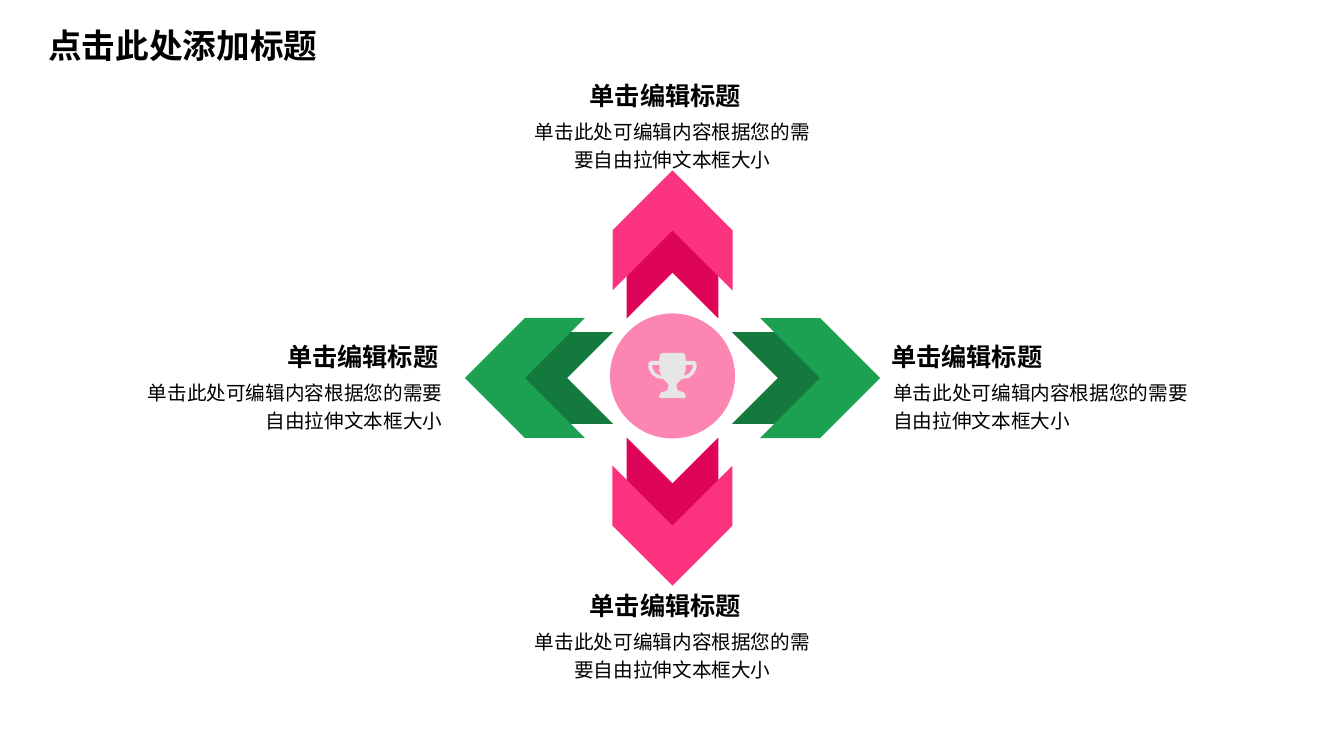
"""Build a slide with four chevron arrows around a trophy."""
from pptx import Presentation
from pptx.dml.color import RGBColor
from pptx.enum.shapes import MSO_SHAPE
from pptx.enum.text import MSO_ANCHOR, MSO_AUTO_SIZE, PP_ALIGN
from pptx.oxml.ns import qn
from pptx.util import Pt
from lxml.etree import SubElement

PX = 9144
FONT = "Noto Sans CJK SC"
BLACK = RGBColor(0x00, 0x00, 0x00)
GREEN = RGBColor(0x1B, 0xA1, 0x51)
FOREST = RGBColor(0x14, 0x79, 0x3D)
PINK = RGBColor(0xFB, 0x33, 0x7F)
CRIMSON = RGBColor(0xDE, 0x04, 0x57)
ROSE = RGBColor(0xFD, 0x85, 0xB2)
GRAY = RGBColor(0xE7, 0xE6, 0xE6)
MID_X, MID_Y = 667, 375


def paint(shape, color):
    shape.fill.solid()
    shape.fill.fore_color.rgb = color
    shape.line.fill.background()
    shape.shadow.inherit = False


def write(shape, text, size, bold, align, inset=True):
    frame = shape.text_frame
    look = {"word_wrap": True, "auto_size": MSO_AUTO_SIZE.NONE,
            "vertical_anchor": MSO_ANCHOR.TOP}
    if not inset:
        look.update(margin_left=0, margin_right=0, margin_top=0, margin_bottom=0)
    for key, value in look.items():
        setattr(frame, key, value)
    para = frame.paragraphs[0]
    para.alignment = align
    run = para.add_run()
    run.text = text
    for key, value in {"size": Pt(size), "bold": bold, "name": FONT}.items():
        setattr(run.font, key, value)
    run.font.color.rgb = BLACK
    SubElement(run.font._element, qn("a:ea")).set("typeface", FONT)
    return para


deck = Presentation()
deck.slide_width, deck.slide_height = 1333 * PX, 750 * PX
slide = deck.slides.add_slide(deck.slide_layouts[5])
shapes = slide.shapes

title = shapes.title
place = {"left": 38, "top": 20, "width": 378, "height": 50}
for key, value in place.items():
    setattr(title, key, value * PX)
write(title, "点击此处添加标题", 24, True, PP_ALIGN.LEFT)

arms = [
    (1, 0, 0, FOREST, GREEN),
    (-1, 0, 180, FOREST, GREEN),
    (0, 1, 90, CRIMSON, PINK),
    (0, -1, 270, CRIMSON, PINK),
]
for dx, dy, turn, dark, light in arms:
    for gap, size, color in [(59, 91, dark), (87, 119, light)]:
        reach = gap + size / 2
        left = MID_X + dx * reach - size / 2
        top = MID_Y + dy * reach - size / 2
        arrow = shapes.add_shape(MSO_SHAPE.CHEVRON, int(left * PX),
                                 int(top * PX), size * PX, size * PX)
        arrow.rotation = turn
        paint(arrow, color)

disc = shapes.add_shape(MSO_SHAPE.OVAL, 605 * PX, 311 * PX, 124 * PX, 124 * PX)
paint(disc, ROSE)

half = [(675, 350), (679, 351), (680, 355), (680, 358), (688, 358), (690, 359),
        (691, 361), (691, 365), (688, 371), (683, 375), (676, 376), (673, 379),
        (671, 381), (671, 384), (672, 387), (674, 388), (678, 389), (680, 392),
        (680, 394), (679, 395)]
grip = [(680, 362), (687, 362), (687, 365), (684, 370), (678, 373), (680, 368)]
flip = [(2 * MID_X - x, y) for x, y in reversed(half)]
other = [(2 * MID_X - x, y) for x, y in grip]
pen = shapes.build_freeform(*half[0], scale=PX)
pen.add_line_segments(half[1:] + flip)
for hole in (grip, other):
    pen.move_to(*hole[0])
    pen.add_line_segments(hole[1:])
paint(pen.convert_to_shape(), GRAY)

notes = [
    (275, 334, 140, 299, PP_ALIGN.RIGHT),
    (874, 334, 886, 307, PP_ALIGN.LEFT),
    (575, 75, 521, 292, PP_ALIGN.CENTER),
    (575, 581, 521, 292, PP_ALIGN.CENTER),
]
for left, top, start, width, align in notes:
    head = shapes.add_textbox(left * PX, top * PX, 184 * PX, 40 * PX)
    write(head, "单击编辑标题", 18, True, PP_ALIGN.LEFT)
    body = shapes.add_textbox(start * PX, (top + 39) * PX, width * PX, 55 * PX)
    para = write(body, "单击此处可编辑内容根据您的需要自由拉伸文本框大小",
                 14, False, align, inset=False)
    para.line_spacing = 1.2
    para.space_after = Pt(6)

deck.save("out.pptx")
